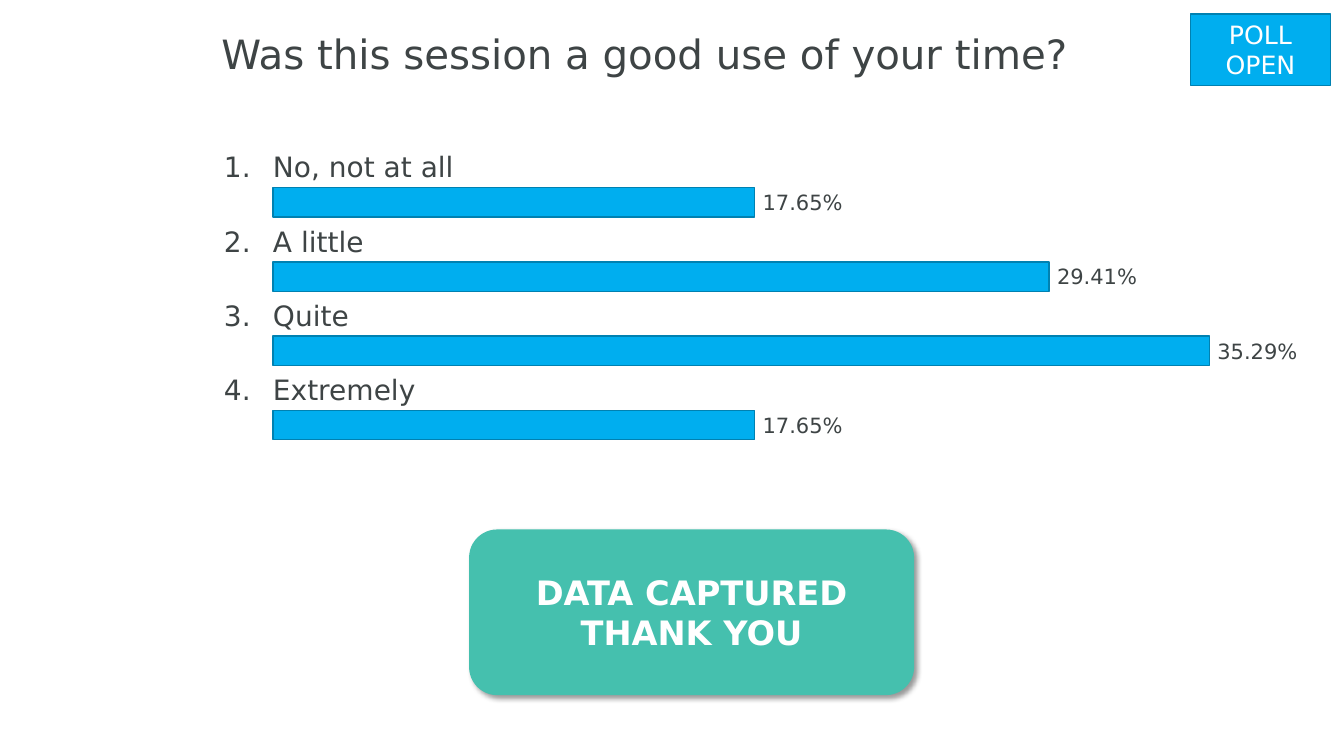
from lxml import etree
from pptx import Presentation
from pptx import util as u
from pptx.dml.color import RGBColor
from pptx.enum import shapes, text
from pptx.oxml.ns import qn

# Content
QUESTION = "Was this session a good use of your time?"
STATUS = "POLL OPEN"
THANKS = ["DATA CAPTURED", "THANK YOU"]
ANSWERS = [  # answer, share, bar length in cm
    ("No, not at all", "17.65%", 12.14),
    ("A little", "29.41%", 19.56),
    ("Quite", "35.29%", 23.6),
    ("Extremely", "17.65%", 12.14),
]

# Style
FONT = "DejaVu Sans"
COLOURS = {"text": "3E4445", "bar": "00AEEF", "edge": "0081B1",
           "button": "45C0AE", "white": "FFFFFF", "shadow": "000000"}
LEFT, BAR_LEFT = 5.33, 6.88
FIRST_TOP, ROW_STEP = 3.63, 1.87
BAR_DROP, SHARE_DROP = 1.1, 1.15


def colour(name):
    return RGBColor.from_string(COLOURS[name])


def write(shape, lines, size, ink, align=text.PP_ALIGN.LEFT, bold=False,
          insets=(0.25, 0.13, 0.25, 0.13), anchor=text.MSO_ANCHOR.TOP,
          wrap=True, fit=text.MSO_AUTO_SIZE.NONE):
    frame = shape.text_frame
    frame.word_wrap = wrap
    frame.auto_size = fit
    frame.vertical_anchor = anchor
    (frame.margin_left, frame.margin_top,
     frame.margin_right, frame.margin_bottom) = map(u.Cm, insets)
    paragraph = frame.paragraphs[0]
    paragraph.alignment = align
    for number, line in enumerate(lines):
        if number:
            paragraph.add_line_break()
        run = paragraph.add_run()
        run.text = line
        run.font.name = FONT
        run.font.size = u.Pt(size)
        run.font.bold = bold
        run.font.color.rgb = colour(ink)
    return paragraph


def add_block(parent, kind, box, fill, edge):
    block = parent.add_shape(kind, *map(u.Cm, box))
    block.shadow.inherit = False
    block.fill.solid()
    block.fill.fore_color.rgb = colour(fill)
    block.line.color.rgb = colour(edge)
    block.line.width = u.Pt(1)
    return block


def add_label(parent, box, label, size, insets, **options):
    write(parent.add_textbox(*map(u.Cm, box)), [label], size, "text",
          insets=insets, fit=text.MSO_AUTO_SIZE.SHAPE_TO_FIT_TEXT, **options)


def add_soft_shadow(shape):
    effects = shape._element.spPr.find(qn("a:effectLst"))
    shadow = etree.SubElement(
        effects, qn("a:outerShdw"), blurRad=str(u.Pt(4)), dist=str(u.Pt(3)),
        dir=str(45 * 60000), algn="tl", rotWithShape="0")
    tint = etree.SubElement(shadow, qn("a:srgbClr"), val=COLOURS["shadow"])
    etree.SubElement(tint, qn("a:alpha"), val="40000")


def main():
    deck = Presentation()
    deck.slide_width, deck.slide_height = u.Cm(33.87), u.Cm(19.05)
    slide = deck.slides.add_slide(deck.slide_layouts[5])

    # Question
    question = slide.shapes.title
    question.left, question.top = u.Cm(LEFT), u.Cm(0.74)
    question.width, question.height = u.Cm(24.18), u.Cm(2.69)
    write(question, [QUESTION], 28.8, "text").line_spacing = 0.9

    # Poll status
    status = add_block(slide.shapes, shapes.MSO_SHAPE.RECTANGLE,
                       (30, 0.35, 3.53, 1.8), "bar", "edge")
    write(status, [STATUS], 18, "white", text.PP_ALIGN.CENTER,
          fit=text.MSO_AUTO_SIZE.SHAPE_TO_FIT_TEXT)

    # Thank-you button
    thanks = add_block(slide.shapes, shapes.MSO_SHAPE.ROUNDED_RECTANGLE,
                       (11.84, 13.36, 11.18, 4.14), "button", "button")
    add_soft_shadow(thanks)
    write(thanks, THANKS, 24, "white", text.PP_ALIGN.CENTER, bold=True,
          anchor=text.MSO_ANCHOR.MIDDLE)

    # Answers, one group per row
    for row, (answer, share, length) in enumerate(ANSWERS):
        top = FIRST_TOP + row * ROW_STEP
        group = slide.shapes.add_group_shape().shapes
        add_label(group, (LEFT, top, BAR_LEFT - LEFT, 0.99), f"{row + 1}.", 20,
                  (0.25, 0.15, 0.56, 0), align=text.PP_ALIGN.RIGHT, wrap=False)
        add_label(group, (BAR_LEFT, top, 25.6, 1.07), answer, 20,
                  (0, 0.15, 0, 0.08))
        add_label(group, (BAR_LEFT + length, top + SHARE_DROP, 2.34, 0.64),
                  share, 15, (0.2, 0, 0, 0), wrap=False)
        add_block(group, shapes.MSO_SHAPE.RECTANGLE,
                  (BAR_LEFT, top + BAR_DROP, length, 0.74), "bar", "edge")

    deck.save("out.pptx")


if __name__ == "__main__":
    main()
